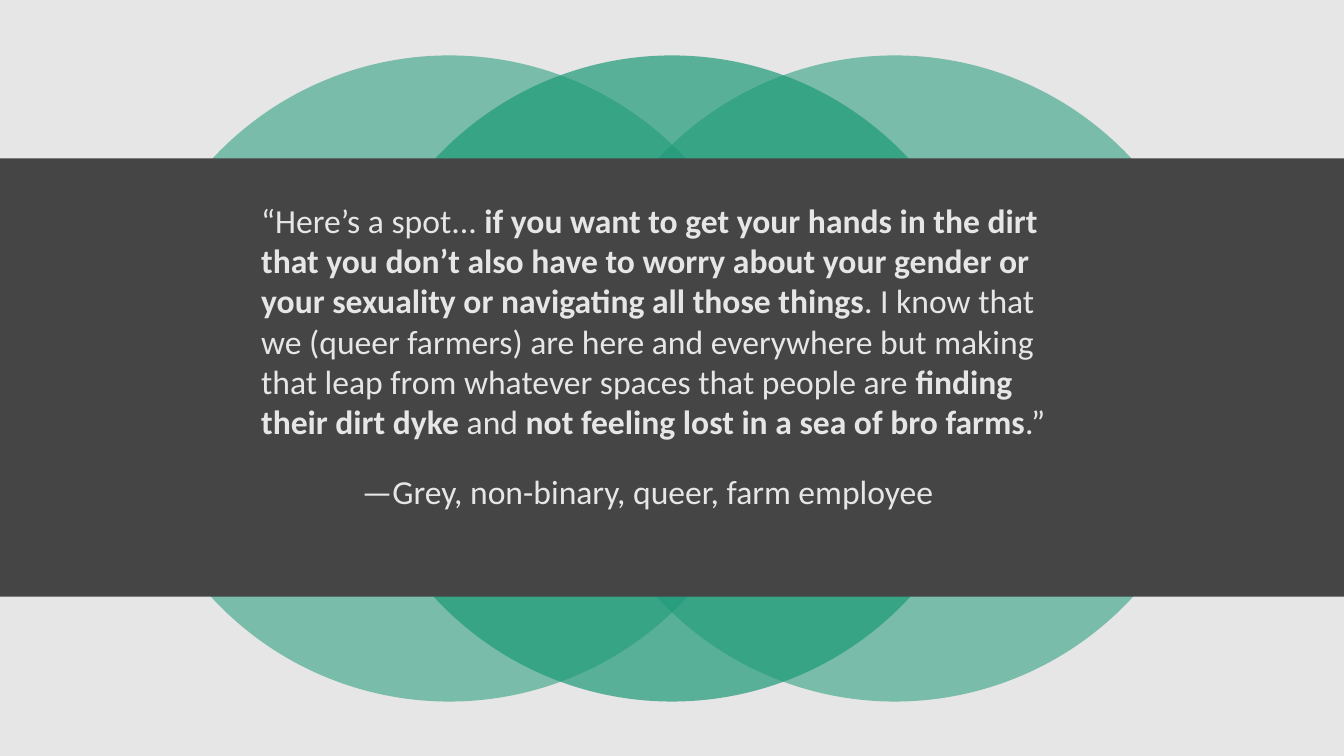
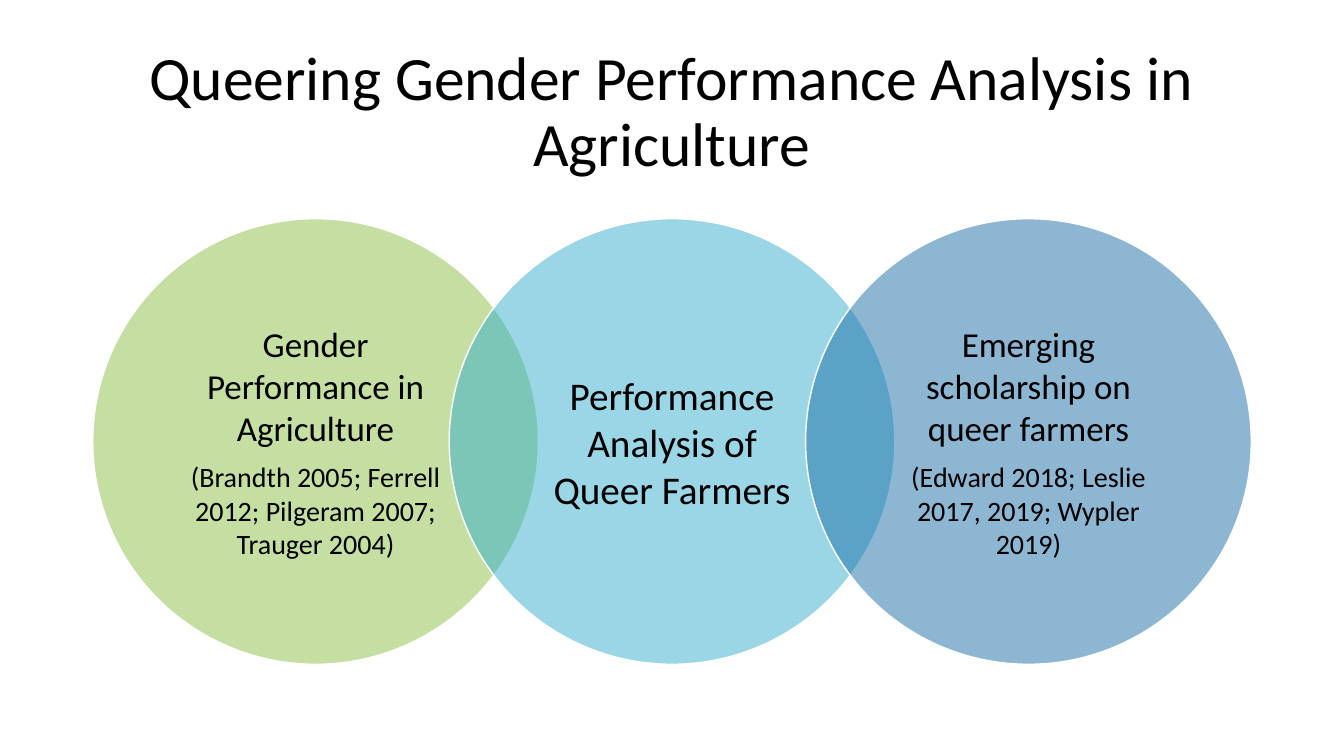
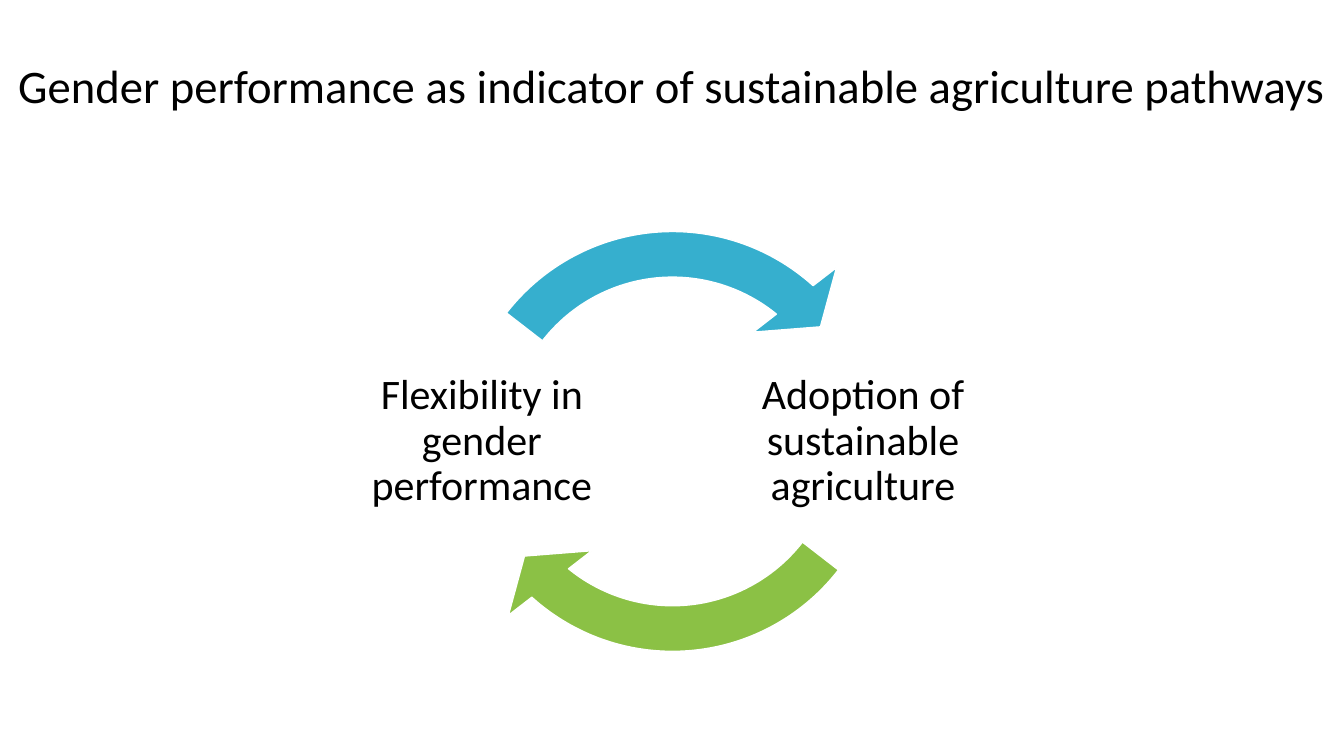
"""Build three slides on queer farmers and gender performance in agriculture."""
from lxml.etree import SubElement
from pptx import Presentation
from pptx.dml.color import RGBColor
from pptx.enum.shapes import MSO_SHAPE as SHAPE
from pptx.enum.text import MSO_ANCHOR as ANCHOR, MSO_AUTO_SIZE as AUTO_SIZE, PP_ALIGN as ALIGN
from pptx.oxml.ns import qn
from pptx.util import Inches, Pt

FONT = "Calibri"
COLORS = {
    "dark": "454545", "pale": "E7E6E6", "teal": "1D9A78", "green": "8BC145",
    "cyan": "36AFCE", "blue": "1D6FA9", "white": "FFFFFF", "black": "000000",
}
WIDTH, HEIGHT = 13.33, 7.5
TITLE_BOX = (0, 0.4, WIDTH, 1.45)

QUOTE = [
    [("“Here’s a spot... ", False),
     ("if you want to get your hands in the dirt that you don’t also have to worry about "
      "your gender or your sexuality or navigating all those things", True),
     (". I know that we (queer farmers) are here and everywhere but making that leap from "
      "whatever spaces that people are ", False),
     ("finding their dirt dyke", True),
     (" and ", False),
     ("not feeling lost in a sea of bro farms", True),
     (".”", False)],
    "—Grey, non-binary, queer, farm employee",
]
HALOS = [(-1, 55), (1, 55), (0, 70)]

VENN_TITLE = "Queering Gender Performance Analysis in Agriculture"
VENN = [
    ("green", ["Gender Performance in Agriculture",
               "(Brandth 2005; Ferrell 2012; Pilgeram 2007; Trauger 2004)"], (25, 20)),
    ("cyan", ["Performance Analysis of Queer Farmers"], (28,)),
    ("blue", ["Emerging scholarship on queer farmers",
              "(Edward 2018; Leslie 2017, 2019; Wypler 2019)"], (25, 20)),
]

CYCLE_TITLE = "Gender performance as indicator of sustainable agriculture pathways"
CYCLE = [
    ("Adoption of sustainable agriculture", 7.4, "green", 0),
    ("Flexibility in gender performance", 3.62, "cyan", 108),
]


def rgb(name):
    """Return the named colour."""
    return RGBColor.from_string(COLORS[name])


def place(shape, box):
    """Move and size a shape, in inches."""
    shape.left, shape.top, shape.width, shape.height = map(Inches, box)


def write(frame, paragraphs, sizes, color="black", align=ALIGN.CENTER, anchor=ANCHOR.MIDDLE,
          spacing=1.0, gap=0, insets=(0.1, 0.05, 0.1, 0.05)):
    """Fill a text frame; a paragraph is a string or a list of (text, bold) runs."""
    frame.word_wrap = True
    frame.auto_size = AUTO_SIZE.NONE
    frame.vertical_anchor = anchor
    (frame.margin_left, frame.margin_top,
     frame.margin_right, frame.margin_bottom) = map(Inches, insets)
    for index, (content, size) in enumerate(zip(paragraphs, sizes)):
        paragraph = frame.add_paragraph() if index else frame.paragraphs[0]
        paragraph.alignment = align
        paragraph.line_spacing = spacing
        paragraph.space_before = Pt(gap if index else 0)
        paragraph.space_after = Pt(0)
        for text, bold in [(content, False)] if isinstance(content, str) else content:
            run = paragraph.add_run()
            run.text = text
            run.font.name, run.font.size, run.font.bold = FONT, Pt(size), bold
            run.font.color.rgb = rgb(color)


def add_text(slide, box, paragraphs, sizes, **style):
    """Add a text box."""
    write(slide.shapes.add_textbox(*map(Inches, box)).text_frame, paragraphs, sizes, **style)


def add_filled(slide, kind, box, color, opacity=100, outline=None):
    """Add a filled preset shape, optionally translucent or outlined."""
    shape = slide.shapes.add_shape(kind, *map(Inches, box))
    shape.shadow.inherit = False
    shape.fill.solid()
    shape.fill.fore_color.rgb = rgb(color)
    if opacity < 100:
        tint = shape.fill._xPr.find(qn("a:solidFill")).find(qn("a:srgbClr"))
        SubElement(tint, qn("a:alpha")).set("val", str(opacity * 1000))
    if outline:
        shape.line.color.rgb = rgb(outline)
        shape.line.width = Pt(1)
    else:
        shape.line.fill.background()
    return shape


def add_slide(deck, layout, background):
    """Add a slide with a plain background."""
    slide = deck.slides.add_slide(deck.slide_layouts[layout])
    slide.background.fill.solid()
    slide.background.fill.fore_color.rgb = rgb(background)
    return slide


def add_titled_slide(deck, title, size, **style):
    """Add a white slide with a full-width centred title."""
    slide = add_slide(deck, 5, "white")
    place(slide.shapes.title, TITLE_BOX)
    write(slide.shapes.title.text_frame, [title], [size], spacing=0.9, **style)
    return slide


def build_quote(deck):
    """Quote on a dark band over three translucent circles."""
    slide = add_slide(deck, 1, "dark")
    title, body = slide.placeholders
    title._element.getparent().remove(title._element)
    add_filled(slide, SHAPE.RECTANGLE, (0, 0, WIDTH, HEIGHT), "pale")
    for offset, opacity in HALOS:
        add_filled(slide, SHAPE.OVAL, (3.46 + offset * 2.21, 0.55, 6.41, 6.41), "teal", opacity)
    add_filled(slide, SHAPE.RECTANGLE, (0, 1.57, WIDTH, 4.35), "dark")
    place(body, (2.49, 1.93, 8.23, 3.67))
    write(body.text_frame, QUOTE, (24, 24), color="pale", align=ALIGN.LEFT,
          anchor=ANCHOR.TOP, gap=21)
    for paragraph, margin in zip(body.text_frame.paragraphs, (0, 1)):
        properties = paragraph._p.get_or_add_pPr()
        properties.set("marL", str(Inches(margin)))
        properties.set("indent", "0")
        SubElement(properties, qn("a:buNone"))
    slide.shapes._spTree.append(body._element)


def build_venn(deck):
    """Three overlapping circles in a row."""
    slide = add_titled_slide(deck, VENN_TITLE, 44)
    top, diameter, label = 2.17, 4.42, 3.12
    first, last = 0.92, 7.99
    inset = (diameter - label) / 2
    for index, (color, paragraphs, sizes) in enumerate(VENN):
        left = first + index * (last - first) / (len(VENN) - 1)
        add_filled(slide, SHAPE.OVAL, (left, top, diameter, diameter), color, 50, "white")
        add_text(slide, (left + inset, top + inset, label, label), paragraphs, sizes,
                 gap=8, insets=(0.24, 0.03, 0.24, 0.03))


def build_cycle(deck):
    """Two labels joined by a pair of circular arrows."""
    slide = add_titled_slide(deck, CYCLE_TITLE, 33.3, insets=(0.1, 0.05, 0.1, 0.55))
    for label, left, color, turn in CYCLE:
        add_text(slide, (left, 3.22, 2.32, 2.32), [label], [30], spacing=0.9, insets=(0.04,) * 4)
        arrow = add_filled(slide, SHAPE.CIRCULAR_ARROW, (4.29, 2, 4.76, 4.76), color,
                           outline="white")
        for index, value in enumerate((0.095, 6.85, 78.49 + turn, 22.65 + turn, 0.11)):
            arrow.adjustments[index] = value


def main():
    """Build and save the deck."""
    deck = Presentation()
    deck.slide_width, deck.slide_height = Inches(WIDTH), Inches(HEIGHT)
    for build in (build_quote, build_venn, build_cycle):
        build(deck)
    deck.save("out.pptx")


if __name__ == "__main__":
    main()
